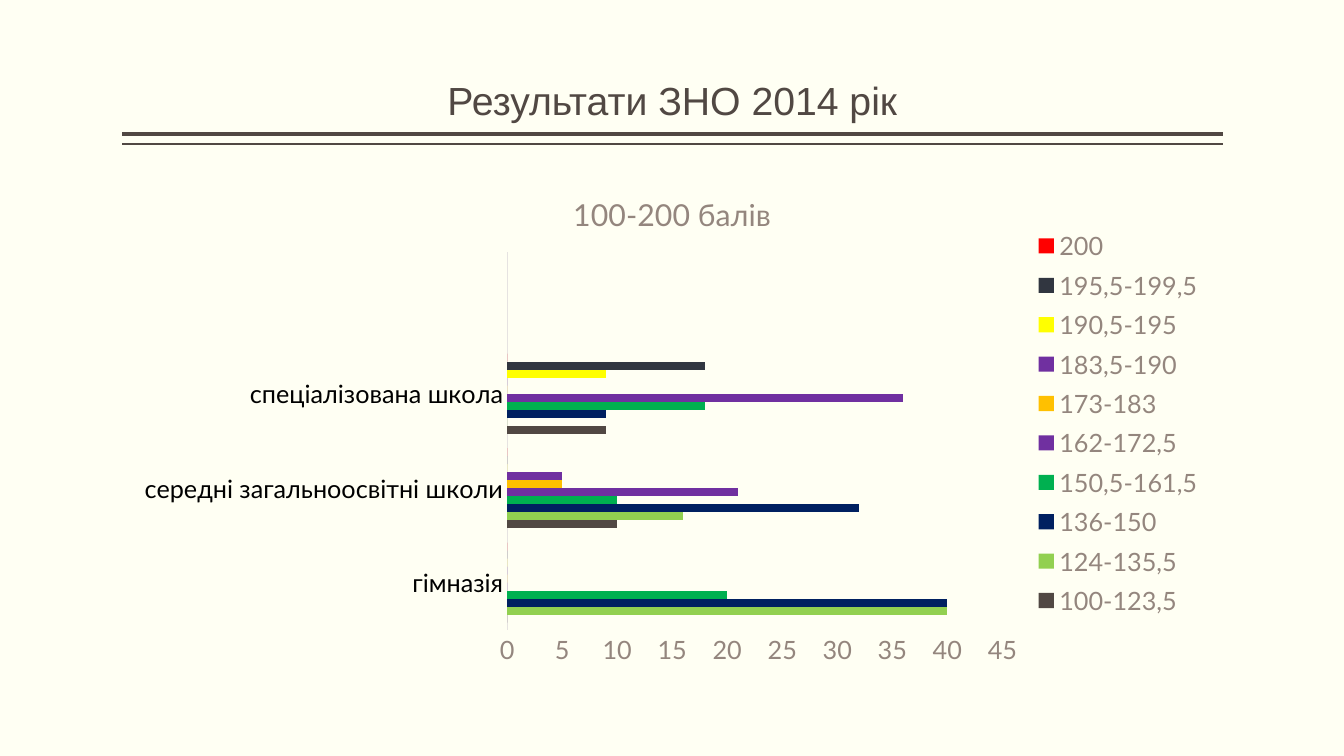
from dataclasses import dataclass
from lxml.etree import SubElement
from pptx import Presentation
from pptx.chart.data import CategoryChartData
from pptx.dml.color import RGBColor
from pptx.enum.chart import XL_CHART_TYPE, XL_LEGEND_POSITION, XL_TICK_MARK
from pptx.enum.shapes import MSO_CONNECTOR
from pptx.enum.text import MSO_ANCHOR, PP_ALIGN
from pptx.oxml.ns import qn
from pptx.util import Pt

TITLE = "Результати ЗНО 2014 рік"
CHART_TITLE = "100-200 балів"
SCHOOLS = ["гімназія", "середні загальноосвітні школи", "спеціалізована школа", ""]
SCORE_BANDS = [
    ("100-123,5", "514843", (0, 10, 9, None)),
    ("124-135,5", "92D050", (40, 16, 0, None)),
    ("136-150", "002060", (40, 32, 9, None)),
    ("150,5-161,5", "00B050", (20, 10, 18, None)),
    ("162-172,5", "7030A0", (0, 21, 36, None)),
    ("173-183", "FFC000", (0, 5, 0, None)),
    ("183,5-190", "7030A0", (0, 5, 0, None)),
    ("190,5-195", "FFFF00", (0, 0, 9, None)),
    ("195,5-199,5", "313640", (0, 0, 18, None)),
    ("200", "FF0000", (0, 0, 0, None)),
]
LEFT, WIDTH = 87.1, 786.2
RULES = [(95.8, 3), (103, 1)]
PLOT_AREA = {"x": 0.35, "y": 0.16, "w": 0.45, "h": 0.75}
LEGEND_AREA = {"x": 0.82, "y": 0.1, "w": 0.17, "h": 0.8}


@dataclass(frozen=True)
class Theme:
    background: str = "FFFFF3"
    dark: str = "514843"
    muted: str = "94867E"
    label: str = "000000"
    axis: str = "E6E3E1"
    title_font: str = "Arial"
    chart_font: str = "Lato"
    title_size: float = 28
    chart_title_size: float = 21.6
    chart_size: float = 18


THEME = Theme()


def style_font(font, name, size, color):
    """Apply a typeface, size and colour."""
    font.name, font.size, font.bold = name, Pt(size), False
    font.color.rgb = RGBColor.from_string(color)


def place(layout, area, inner=False):
    """Fix a chart part at fractions of the chart area."""
    manual = SubElement(layout, qn("c:manualLayout"))
    settings = {"layoutTarget": "inner"} if inner else {}
    settings.update(xMode="edge", yMode="edge", **area)
    for tag, value in settings.items():
        SubElement(manual, qn(f"c:{tag}")).set("val", str(value))


def add_heading(slide):
    """Fill the title and draw the double rule under it."""
    heading = slide.shapes.title
    heading.left, heading.top = Pt(LEFT), Pt(5.8)
    heading.width, heading.height = Pt(WIDTH), Pt(86.4)
    frame = heading.text_frame
    frame.text = TITLE
    frame.vertical_anchor = MSO_ANCHOR.BOTTOM
    frame.margin_left = frame.margin_right = 0
    frame.margin_top = frame.margin_bottom = Pt(3.6)
    paragraph = frame.paragraphs[0]
    paragraph.alignment, paragraph.line_spacing = PP_ALIGN.CENTER, 0.9
    style_font(paragraph.runs[0].font, THEME.title_font, THEME.title_size, THEME.dark)
    for y, weight in RULES:
        rule = slide.shapes.add_connector(
            MSO_CONNECTOR.STRAIGHT, Pt(LEFT + WIDTH), Pt(y), Pt(LEFT), Pt(y))
        rule.line.width = Pt(weight)
        rule.line.color.rgb = RGBColor.from_string(THEME.dark)
        SubElement(rule.element.spPr, qn("a:effectLst"))


def add_results(slide):
    """Chart the share of pupils in each score band by school type."""
    results = CategoryChartData()
    results.categories = SCHOOLS
    for band, _, shares in SCORE_BANDS:
        results.add_series(band, shares)
    chart = slide.shapes.add_chart(
        XL_CHART_TYPE.BAR_CLUSTERED, Pt(LEFT), Pt(122.4), Pt(WIDTH), Pt(360), results).chart
    style_font(chart.font, THEME.chart_font, THEME.chart_size, THEME.dark)

    caption = chart.chart_title.text_frame
    caption.text = CHART_TITLE
    style_font(caption.paragraphs[0].runs[0].font, THEME.chart_font,
               THEME.chart_title_size, THEME.muted)
    chart.chart_title.include_in_layout = False

    bars = chart.plots[0]
    bars.gap_width, bars.overlap, bars.vary_by_categories = 182, 0, False
    for series, (_, color, _) in zip(bars.series, SCORE_BANDS):
        series.format.fill.solid()
        series.format.fill.fore_color.rgb = RGBColor.from_string(color)
        series.invert_if_negative = False

    schools, shares = chart.category_axis, chart.value_axis
    for axis, color in ((schools, THEME.label), (shares, THEME.muted)):
        axis.major_tick_mark = axis.minor_tick_mark = XL_TICK_MARK.NONE
        axis.has_major_gridlines = False
        style_font(axis.tick_labels.font, THEME.chart_font, THEME.chart_size, color)
    schools.format.line.width = Pt(0.75)
    schools.format.line.color.rgb = RGBColor.from_string(THEME.axis)
    shares.format.line.fill.background()
    shares.minimum_scale, shares.maximum_scale, shares.major_unit = 0, 45, 5

    chart.has_legend = True
    legend = chart.legend
    legend.position, legend.include_in_layout = XL_LEGEND_POSITION.RIGHT, False
    style_font(legend.font, THEME.chart_font, THEME.chart_size, THEME.muted)

    plot_area = chart.element.chart.plotArea
    plot_layout = plot_area.find(qn("c:layout"))
    if plot_layout is None:
        plot_layout = SubElement(plot_area, qn("c:layout"))
        plot_area.insert(0, plot_layout)
    place(plot_layout, PLOT_AREA, inner=True)
    legend_element = chart.element.chart.find(qn("c:legend"))
    legend_layout = legend_element.find(qn("c:layout"))
    if legend_layout is None:
        legend_layout = SubElement(legend_element, qn("c:layout"))
        legend_element.find(qn("c:legendPos")).addnext(legend_layout)
    place(legend_layout, LEGEND_AREA)


def main():
    """Build and save the slide."""
    deck = Presentation()
    deck.slide_width, deck.slide_height = Pt(960), Pt(540)
    slide = deck.slides.add_slide(deck.slide_layouts[5])
    slide.background.fill.solid()
    slide.background.fill.fore_color.rgb = RGBColor.from_string(THEME.background)
    add_heading(slide)
    add_results(slide)
    deck.save("out.pptx")


if __name__ == "__main__":
    main()
